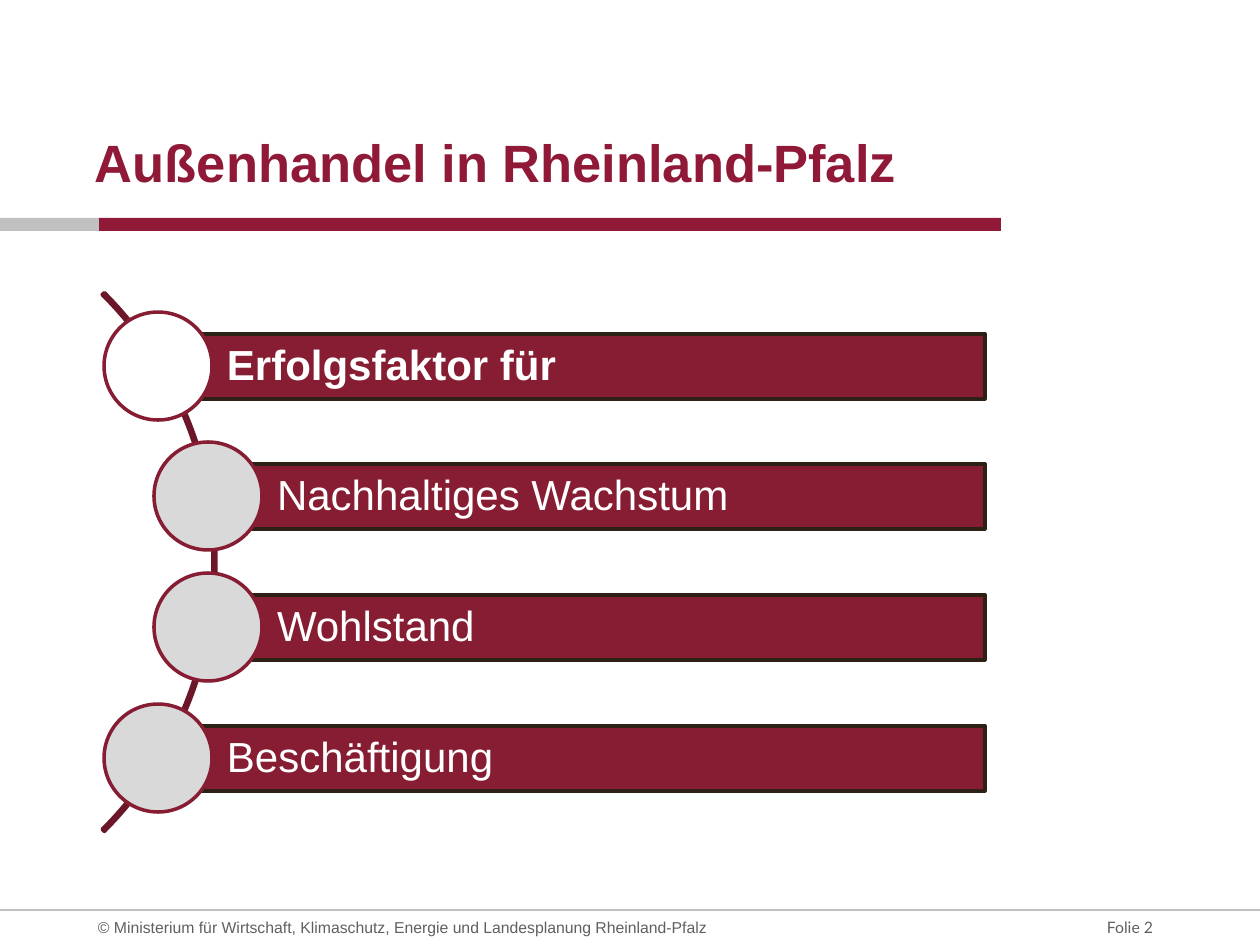
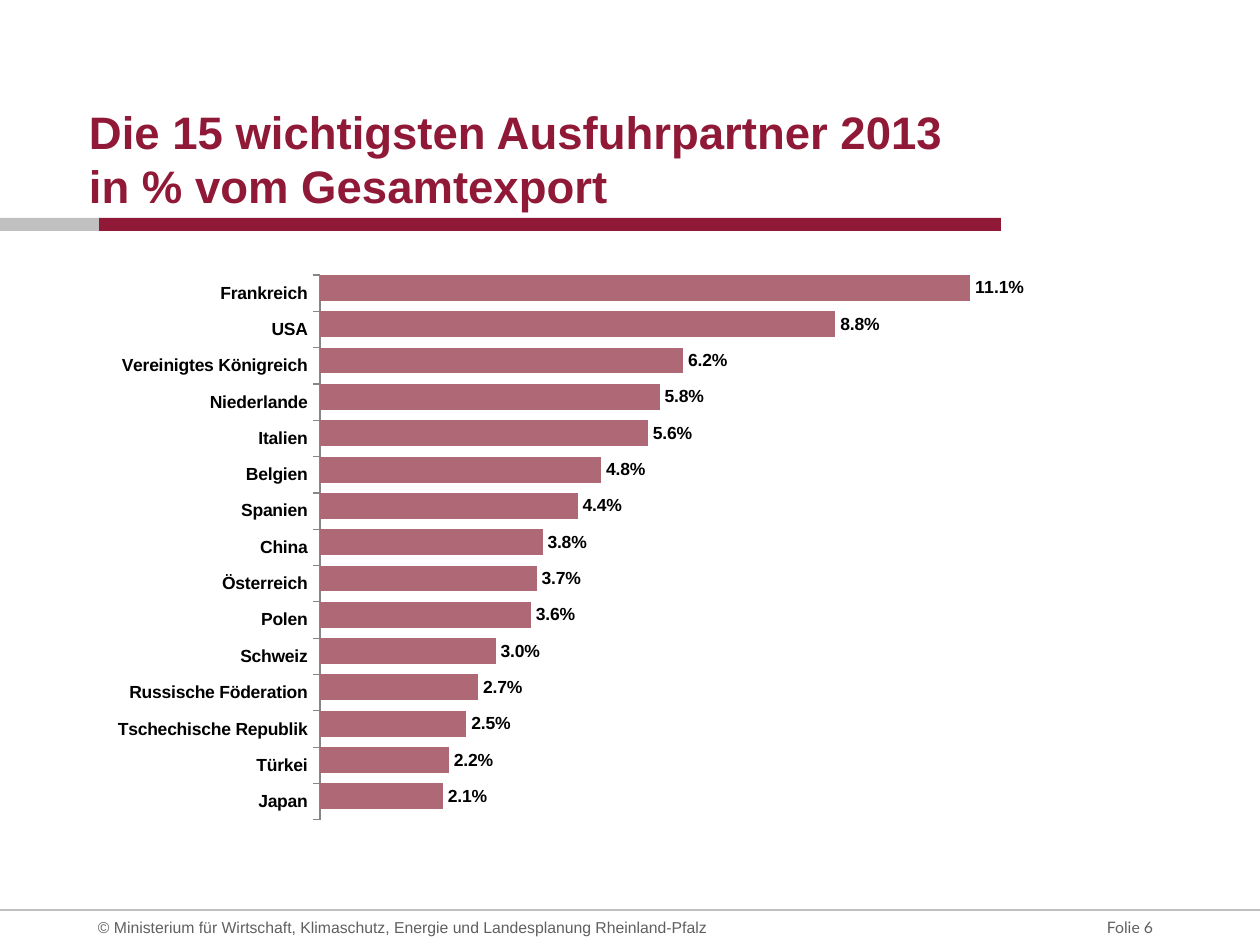
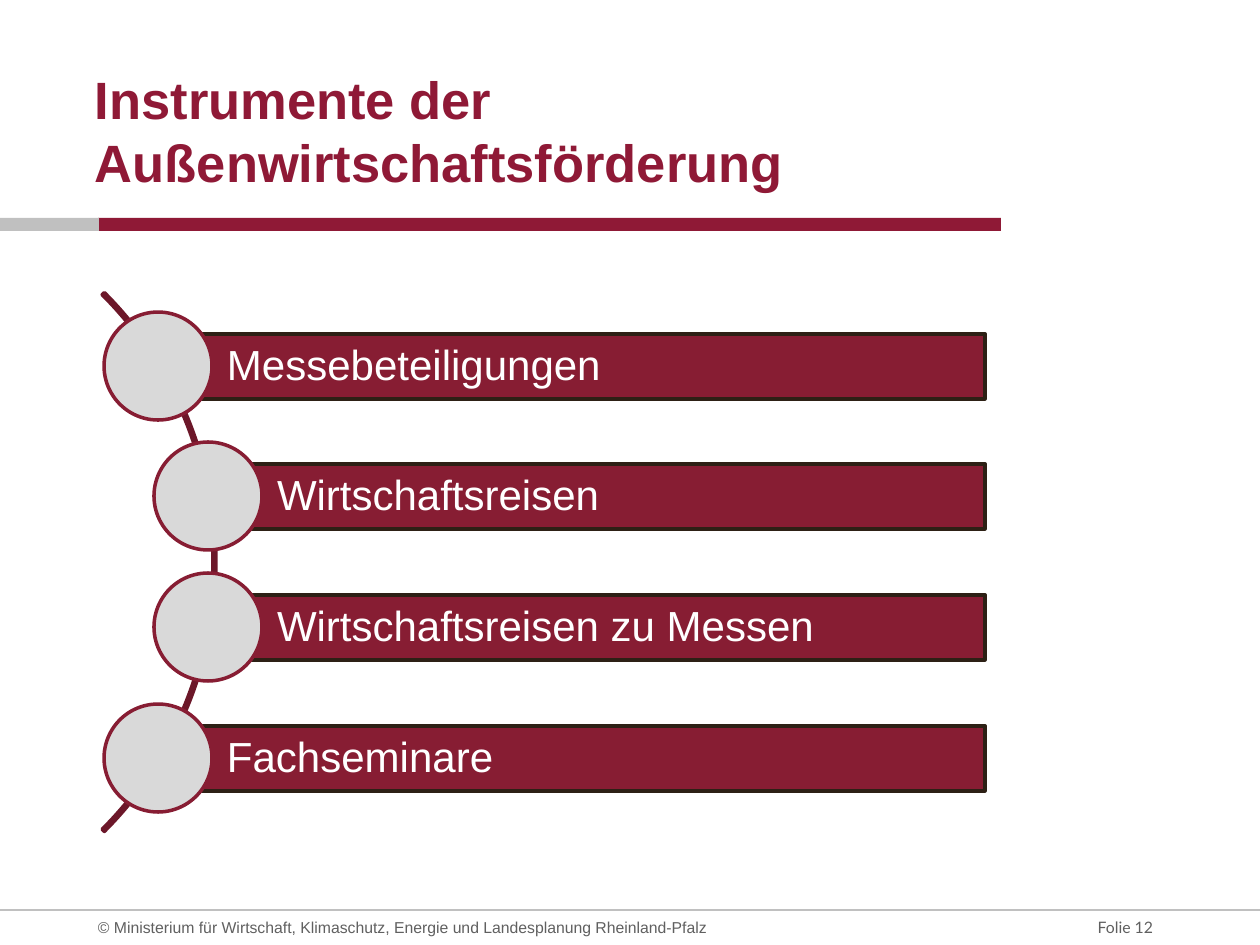
from dataclasses import dataclass

from lxml.etree import SubElement as Sub
from pptx import Presentation
from pptx.chart.data import CategoryChartData as Data
from pptx.dml.color import RGBColor as Rgb
from pptx.enum.chart import XL_CHART_TYPE as Kind
from pptx.enum.chart import XL_LABEL_POSITION as Place
from pptx.enum.chart import XL_TICK_MARK as Tick
from pptx.enum.shapes import MSO_CONNECTOR as Link
from pptx.enum.shapes import MSO_SHAPE as Form
from pptx.enum.text import MSO_ANCHOR as Anchor
from pptx.enum.text import PP_ALIGN as Align
from pptx.oxml import parse_xml
from pptx.oxml.ns import nsdecls, qn
from pptx.util import Emu, Pt

HEX = {
    "wine": "8F1936", "bar": "871D33", "arc": "6C1729", "edge": "2D2015",
    "band": "C0C0C0", "dot": "D9D9D9", "white": "FFFFFF", "note": "606060",
    "rose": "AF6876", "pale": "CFA5AD", "axis": "868686", "black": "000000",
}
WIDE, HIGH = 1260, 945
OWNER = ("© Ministerium für Wirtschaft, Klimaschutz, Energie "
         "und Landesplanung Rheinland-Pfalz")


@dataclass(frozen=True)
class Box:
    left: int
    top: int
    width: int
    height: int

    def emu(self) -> list[Emu]:
        return [px(n) for n in (self.left, self.top, self.width, self.height)]


@dataclass(frozen=True)
class Style:
    size: int
    tint: str
    bold: bool = False
    face: str = "Arial"
    align: Align = Align.LEFT
    anchor: Anchor = Anchor.MIDDLE
    pad: tuple[int, int, int, int] = (0, 0, 0, 0)
    lead: float = 1.0


@dataclass(frozen=True)
class Item:
    text: str
    bold: bool = False
    dot: str = "dot"


NOTE = Style(9, "note")
PAGE = Style(9, "note", face="Lato", align=Align.RIGHT)
HEAD = Style(30, "wine", True, anchor=Anchor.BOTTOM)
HEAD_BOX = Box(95, 66, 805, 127)


def px(n: int) -> Emu:
    return Emu(round(n * 914400 / 126))


def ink(name: str) -> Rgb:
    return Rgb.from_string(HEX[name])


def write(shape, text: str, style: Style) -> None:
    frame = shape.text_frame
    frame.word_wrap = True
    frame.vertical_anchor = style.anchor
    (frame.margin_left, frame.margin_top,
     frame.margin_right, frame.margin_bottom) = map(px, style.pad)
    para = frame.paragraphs[0]
    para.text = text
    para.alignment = style.align
    para.line_spacing = style.lead
    dress(para.font, style)


def dress(font, style: Style) -> None:
    font.name, font.size, font.bold = style.face, Pt(style.size), style.bold
    font.color.rgb = ink(style.tint)


def label(slide, box: Box, text: str, style: Style) -> None:
    write(slide.shapes.add_textbox(*box.emu()), text, style)


def draw(slide, form: Form, box: Box, fill: str, edge: str = ""):
    shape = slide.shapes.add_shape(form, *box.emu())
    shape.shadow.inherit = False
    shape.fill.solid()
    shape.fill.fore_color.rgb = ink(fill)
    if edge:
        shape.line.color.rgb = ink(edge)
        shape.line.width = Pt(2)
    else:
        shape.line.fill.background()
    return shape


def start(deck, page: int, title: str, box: Box = HEAD_BOX,
          style: Style = HEAD):
    """Add a slide with its bands, footer and title."""
    slide = deck.slides.add_slide(deck.slide_layouts[6])
    draw(slide, Form.RECTANGLE, Box(98, 218, 903, 13), "wine")
    draw(slide, Form.RECTANGLE, Box(0, 218, 99, 13), "band")
    rule = slide.shapes.add_connector(
        Link.STRAIGHT, px(0), px(910), px(WIDE), px(910))
    rule.line.color.rgb = ink("band")
    rule.line.width = Pt(0.75)
    Sub(rule._element.spPr, qn("a:effectLst"))
    label(slide, Box(1000, 910, 153, 35), f"Folie {page}", PAGE)
    label(slide, Box(98, 910, 694, 35), OWNER, NOTE)
    label(slide, box, title, style)
    return slide


def curve(slide, items: list[Item]) -> None:
    """Draw bars with dots along an arc."""
    arc = draw(slide, Form.BLOCK_ARC, Box(-546, 181, 762, 762), "arc", "arc")
    arc.fill.background()
    for i, turn in enumerate((189, 27, 0.004)):
        arc.adjustments[i] = turn
    right, high, dot = 985, 65, 108
    for i, item in enumerate(items):
        mid = 366 + i * 392 // 3
        left = 158 if i in (0, len(items) - 1) else 208
        bar = draw(slide, Form.RECTANGLE,
                   Box(left, mid - high // 2, right - left, high),
                   "bar", "edge")
        write(bar, item.text, Style(24, "white", item.bold,
                                    pad=(69, 9, 9, 9), lead=0.9))
        draw(slide, Form.OVAL, Box(left - dot // 2, mid - dot // 2, dot, dot),
             item.dot, "bar")


def chart(slide, shares: dict[str, float]) -> None:
    """Draw the ranking of partners."""
    data = Data(number_format="0.0%")
    data.categories = list(shares)
    data.add_series("Series 1", list(shares.values()))
    for name in ("Series 2", "Series 3"):
        data.add_series(name, [None] * len(shares))
    box, area = Box(100, 265, 945, 567), Box(320, 275, 703, 545)
    graph = slide.shapes.add_chart(
        Kind.BAR_CLUSTERED, *box.emu(), data).chart
    graph.has_legend = graph.has_title = False
    text = Style(10, "black", True)
    dress(graph.font, text)

    # Bars
    plot = graph.plots[0]
    plot.gap_width, plot.overlap = 0, 80
    plot.vary_by_categories = False
    for row, tint in zip(plot.series, ("rose", "pale", "white")):
        row.format.fill.solid()
        row.format.fill.fore_color.rgb = ink(tint)
    marks = plot.series[0].data_labels
    marks.show_value = True
    marks.position = Place.OUTSIDE_END
    marks.number_format, marks.number_format_is_linked = "0.0%", False
    dress(marks.font, text)

    # Axes
    names, scale = graph.category_axis, graph.value_axis
    names.reverse_order = True
    names.major_tick_mark = Tick.OUTSIDE
    names.format.line.color.rgb = ink("axis")
    dress(names.tick_labels.font, text)
    scale.minimum_scale, scale.maximum_scale = 0, 0.12
    scale.has_major_gridlines = scale.visible = False

    # Inner plot area
    parts = {"x": (area.left - box.left) / box.width,
             "y": (area.top - box.top) / box.height,
             "w": area.width / box.width, "h": area.height / box.height}
    body = graph._chartSpace.chart.plotArea
    for old in body.findall(qn("c:layout")):
        body.remove(old)
    modes = "".join(f'<c:{k}Mode val="edge"/>' for k in "xy")
    sizes = "".join(f'<c:{k} val="{v:.4f}"/>' for k, v in parts.items())
    body.insert(0, parse_xml(
        f'<c:layout {nsdecls("c")}><c:manualLayout>'
        f'<c:layoutTarget val="inner"/>{modes}{sizes}'
        '</c:manualLayout></c:layout>'))


def main() -> None:
    deck = Presentation()
    deck.slide_width, deck.slide_height = px(WIDE), px(HIGH)

    # Foreign trade
    curve(start(deck, 2, "Außenhandel in Rheinland-Pfalz"), [
        Item("Erfolgsfaktor für", True, "white"),
        Item("Nachhaltiges Wachstum"),
        Item("Wohlstand"),
        Item("Beschäftigung"),
    ])

    # Export partners
    slide = start(
        deck, 6,
        "Die 15 wichtigsten Ausfuhrpartner 2013\vin % vom Gesamtexport",
        Box(89, 86, 898, 127), Style(26, "wine", True, anchor=Anchor.BOTTOM))
    chart(slide, {
        "Frankreich": 0.111, "USA": 0.088, "Vereinigtes Königreich": 0.062,
        "Niederlande": 0.058, "Italien": 0.056, "Belgien": 0.048,
        "Spanien": 0.044, "China": 0.038, "Österreich": 0.037,
        "Polen": 0.036, "Schweiz": 0.03, "Russische Föderation": 0.027,
        "Tschechische Republik": 0.025, "Türkei": 0.022, "Japan": 0.021,
    })

    # Instruments
    curve(start(deck, 12, "Instrumente der Außenwirtschaftsförderung"), [
        Item("Messebeteiligungen"),
        Item("Wirtschaftsreisen"),
        Item("Wirtschaftsreisen zu Messen"),
        Item("Fachseminare"),
    ])
    deck.save("out.pptx")


if __name__ == "__main__":
    main()
